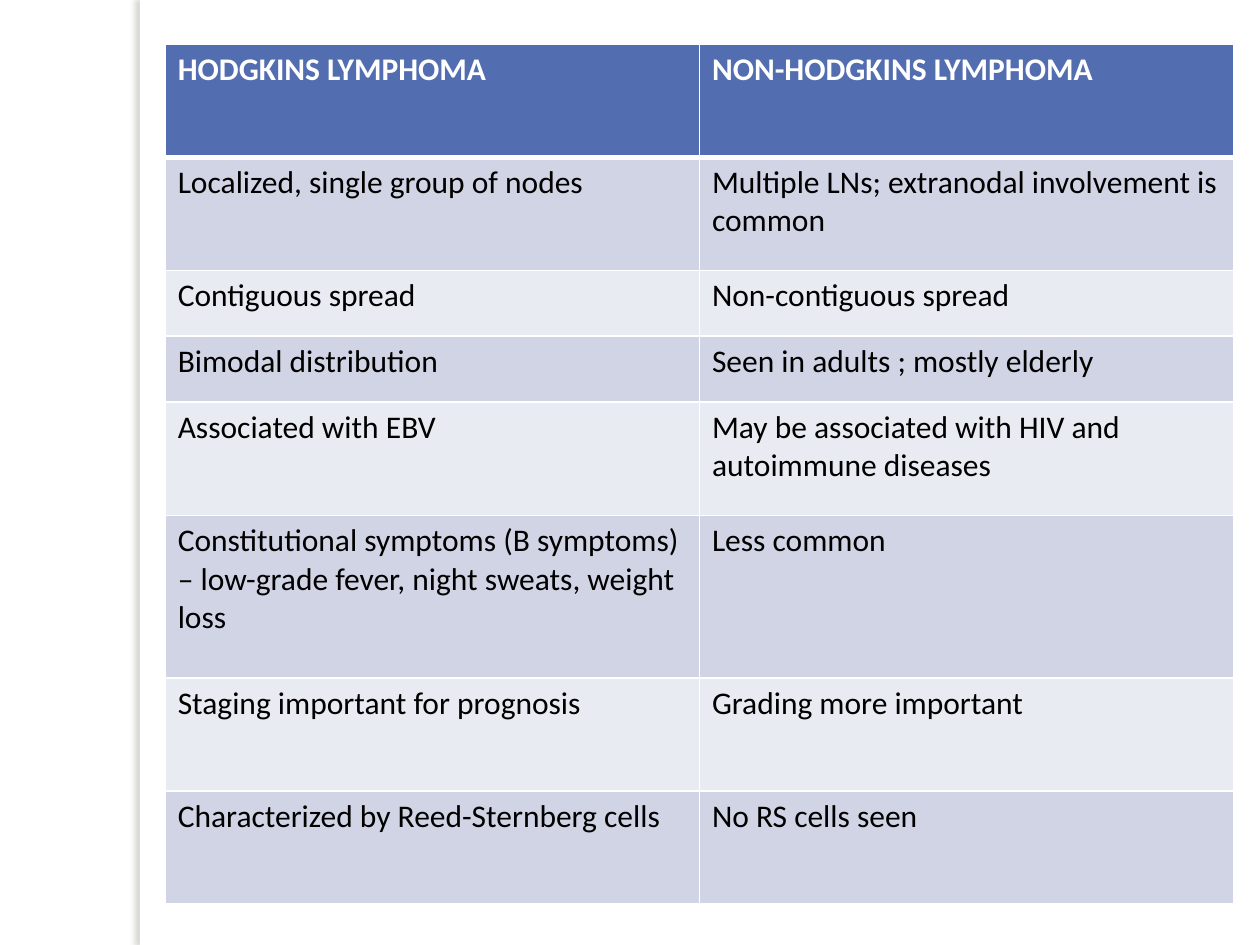
from dataclasses import dataclass

from lxml import etree
from pptx import Presentation
from pptx.dml.color import RGBColor
from pptx.enum.shapes import MSO_SHAPE
from pptx.oxml.ns import qn
from pptx.util import Cm, Pt

RECT = MSO_SHAPE.RECTANGLE


@dataclass(frozen=True)
class Theme:
    font: str = "Calibri"
    size: int = 18
    white: str = "FFFFFF"
    black: str = "000000"
    head: str = "526DB0"
    dark: str = "D1D4E4"
    light: str = "E9EBF2"
    shade: str = "646457"
    thin: int = 1
    thick: int = 3


THEME = Theme()

# Row height in cm, then the two cell texts
ROWS = [
    (2.28, "HODGKINS LYMPHOMA", "NON-HODGKINS LYMPHOMA"),
    (2.28, "Localized, single group of nodes",
     "Multiple LNs; extranodal involvement is common"),
    (1.33, "Contiguous spread", "Non-contiguous spread"),
    (1.33, "Bimodal distribution", "Seen in adults ; mostly elderly"),
    (2.28, "Associated with EBV",
     "May be associated with HIV and autoimmune diseases"),
    (3.28, "Constitutional symptoms (B symptoms) – low-grade fever, "
     "night sweats, weight loss", "Less common"),
    (2.28, "Staging important for prognosis", "Grading more important"),
    (2.28, "Characterized by Reed-Sternberg cells", "No RS cells seen"),
]


def rgb(code):
    return RGBColor.from_string(code)


def add_tint(node, code, alpha=None):
    tint = etree.SubElement(node, qn("a:srgbClr"), val=code)
    if alpha is not None:
        etree.SubElement(tint, qn("a:alpha"), val=str(alpha * 1000))


def add_strip(slide):
    """Add the white side strip with its soft shadow to the left."""
    strip = slide.shapes.add_shape(RECT, Cm(2.82), 0, Cm(0.2), Cm(19.05))
    strip.fill.solid()
    strip.fill.fore_color.rgb = rgb(THEME.white)
    strip.line.fill.background()
    strip.shadow.inherit = False
    effects = strip.element.spPr.find(qn("a:effectLst"))
    shadow = etree.SubElement(
        effects, qn("a:outerShdw"), blurRad=str(Pt(3)), dist=str(Pt(3)),
        dir=str(180 * 60000), algn="ctr", rotWithShape="0")
    add_tint(shadow, THEME.shade, 25)


def set_edges(cell, top, bottom):
    props = cell._tc.get_or_add_tcPr()
    widths = {"L": THEME.thin, "R": THEME.thin, "T": top, "B": bottom}
    for side, width in widths.items():
        edge = etree.SubElement(props, qn("a:ln" + side), w=str(Pt(width)))
        add_tint(etree.SubElement(edge, qn("a:solidFill")), THEME.white)


def fill_cell(cell, text, row):
    is_head = row == 0
    # The heavy rule lies between the header and the first body row
    set_edges(cell, THEME.thick if row == 1 else THEME.thin,
              THEME.thick if is_head else THEME.thin)
    band = THEME.dark if row % 2 else THEME.light
    cell.fill.solid()
    cell.fill.fore_color.rgb = rgb(THEME.head if is_head else band)
    cell.text_frame.text = text
    font = cell.text_frame.paragraphs[0].runs[0].font
    font.name = THEME.font
    font.size = Pt(THEME.size)
    font.bold = is_head
    font.color.rgb = rgb(THEME.white if is_head else THEME.black)


def add_grid(slide):
    """Add the table that compares the two diseases."""
    high = sum(row[0] for row in ROWS)
    grid = slide.shapes.add_table(
        len(ROWS), 2, Cm(3.33), Cm(0.89), Cm(21.54), Cm(high)).table
    for row, (tall, *texts) in enumerate(ROWS):
        grid.rows[row].height = Cm(tall)
        for col, text in enumerate(texts):
            fill_cell(grid.cell(row, col), text, row)


def main():
    deck = Presentation()
    deck.slide_width, deck.slide_height = Cm(25.4), Cm(19.05)
    slide = deck.slides.add_slide(deck.slide_layouts[6])
    add_strip(slide)
    add_grid(slide)
    deck.save("out.pptx")


if __name__ == "__main__":
    main()
